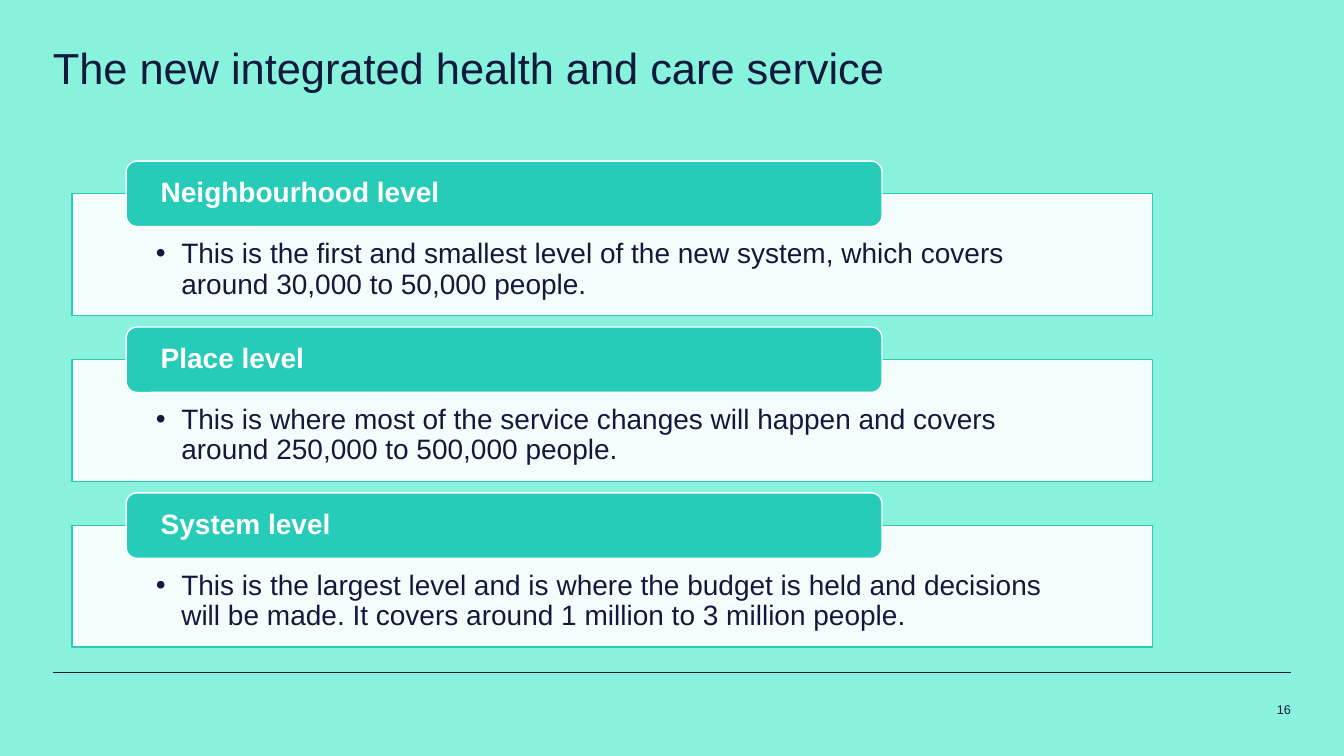
from lxml import etree
from pptx import Presentation
from pptx.dml.color import RGBColor
from pptx.enum import shapes, text
from pptx.oxml.ns import qn
from pptx.util import Cm, Pt

MINT = RGBColor(0x88, 0xF2, 0xDD)
TEAL = RGBColor(0x26, 0xCC, 0xB8)
NAVY = RGBColor(0x12, 0x1A, 0x3C)
WHITE = RGBColor(0xFF, 0xFF, 0xFF)

LEVELS = [
    ("Neighbourhood level",
     "This is the first and smallest level of the new system, which covers "
     "around 30,000 to 50,000 people."),
    ("Place level",
     "This is where most of the service changes will happen and covers "
     "around 250,000 to 500,000 people."),
    ("System level",
     "This is the largest level and is where the budget is held and decisions "
     "will be made. It covers around 1 million to 3 million people."),
]
FIRST_TOP, LEVEL_PITCH = 4.06, 4.18


def write(sp, content, size=20, color=NAVY, bold=False, align=text.PP_ALIGN.LEFT,
          anchor=text.MSO_ANCHOR.TOP, insets=(0, 0, 0, 0), spacing=0.9):
    """Put one formatted paragraph in a shape; insets are left, top, right, bottom in cm."""
    tf = sp.text_frame
    tf.word_wrap = True
    tf.auto_size = text.MSO_AUTO_SIZE.NONE
    tf.vertical_anchor = anchor
    tf.margin_left, tf.margin_top, tf.margin_right, tf.margin_bottom = map(Cm, insets)
    p = tf.paragraphs[0]
    p.alignment = align
    p.line_spacing = spacing
    r = p.add_run()
    r.text = content
    r.font.name = "Arial"
    r.font.size = Pt(size)
    r.font.bold = bold
    r.font.color.rgb = color
    return p


def add_bullet(p):
    pPr = p._p.get_or_add_pPr()
    pPr.set("marL", str(Cm(0.64)))
    pPr.set("indent", str(-Cm(0.64)))
    etree.SubElement(pPr, qn("a:buFont")).set("typeface", "Arial")
    etree.SubElement(pPr, qn("a:buChar")).set("char", "•")


def set_opacity(sp, percent):
    color = sp.fill._xPr.find(qn("a:solidFill"))[0]
    etree.SubElement(color, qn("a:alpha")).set("val", str(percent * 1000))


def add_box(s, kind, left, top, width, height, fill, line):
    sp = s.shapes.add_shape(kind, Cm(left), Cm(top), Cm(width), Cm(height))
    sp.shadow.inherit = False
    sp.fill.solid()
    sp.fill.fore_color.rgb = fill
    sp.line.color.rgb = line
    sp.line.width = Pt(1)
    return sp


def add_level(s, top, heading, description):
    """Add a description panel with its heading tab overlapping the upper edge."""
    panel = add_box(s, shapes.MSO_SHAPE.RECTANGLE, 1.82, top + 0.82, 27.23, 3.07, WHITE, TEAL)
    set_opacity(panel, 90)
    add_bullet(write(panel, description, insets=(2.11, 1.16, 2.11, 0.4)))
    tab = add_box(s, shapes.MSO_SHAPE.ROUNDED_RECTANGLE, 3.18, top, 19.05, 1.65, TEAL, WHITE)
    write(tab, heading, color=WHITE, bold=True, anchor=text.MSO_ANCHOR.MIDDLE,
          insets=(0.79, 0, 0.79, 0))


def add_title(s, content):
    title = s.shapes.title
    title.left, title.top, title.width, title.height = Cm(1.33), Cm(1.04), Cm(31.2), Cm(2.87)
    write(title, content, size=31, spacing=1.0)


def add_footer(s, number):
    rule = s.shapes.add_connector(shapes.MSO_CONNECTOR.STRAIGHT,
                                  Cm(1.33), Cm(16.94), Cm(32.53), Cm(16.94))
    rule.line.color.rgb = NAVY
    rule.line.width = Pt(0.75)
    etree.SubElement(rule._element.spPr, qn("a:effectLst"))
    box = s.shapes.add_textbox(Cm(30.3), Cm(17.68), Cm(2.23), Cm(0.61))
    write(box, number, size=9, align=text.PP_ALIGN.RIGHT, spacing=1.0)


def main():
    prs = Presentation()
    prs.slide_width, prs.slide_height = Cm(33.87), Cm(19.05)
    s = prs.slides.add_slide(prs.slide_layouts[5])
    s.background.fill.solid()
    s.background.fill.fore_color.rgb = MINT
    add_title(s, "The new integrated health and care service")
    add_footer(s, "16")
    for i, (heading, description) in enumerate(LEVELS):
        add_level(s, FIRST_TOP + i * LEVEL_PITCH, heading, description)
    prs.save("out.pptx")


if __name__ == "__main__":
    main()
